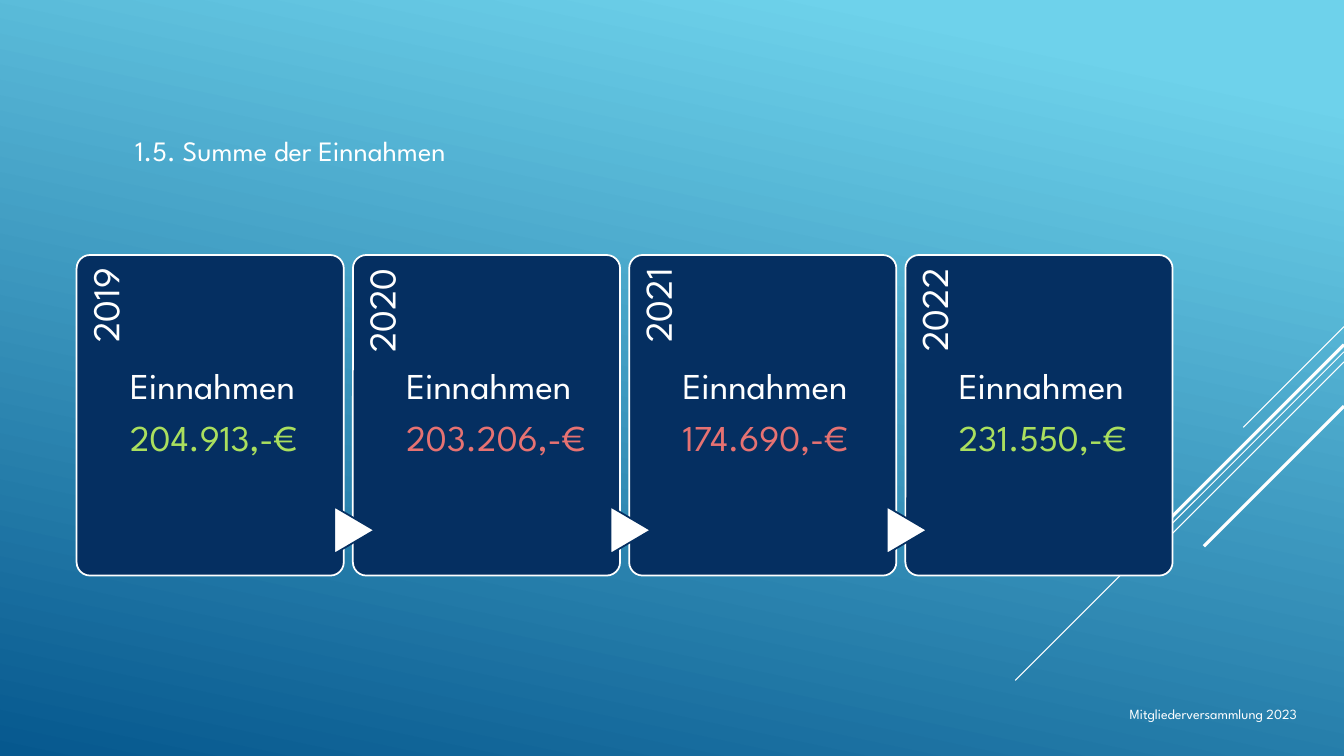
from dataclasses import dataclass

from lxml import etree
from pptx import Presentation
from pptx.dml.color import RGBColor
from pptx.enum import shapes, text
from pptx.oxml.ns import qn
from pptx.util import Inches, Pt


@dataclass(frozen=True)
class Theme:
    font: str = "League Spartan"
    white: str = "FFFFFF"
    navy: str = "052F61"
    rise: str = "AADF5E"
    fall: str = "E67272"
    sky: str = "6ED2EB"
    sea: str = "06588E"
    title_size: float = 20
    year_size: float = 27
    amount_size: float = 26
    footer_size: float = 10


THEME = Theme()
SLIDE_WIDTH, SLIDE_HEIGHT = 13.33, 7.5

# Diagonals from the right edge: top, horizontal run, line width
DIAGONALS = [
    (3.24, 1.0, 0.75),
    (3.49, 3.26, 0.75),
    (3.59, 2.07, 0.75),
    (3.42, 1.91, 2.25),
    (4.03, 1.39, 2.25),
]

INCOME = [
    ("2019", "204.913,-€", THEME.rise),
    ("2020", "203.206,-€", THEME.fall),
    ("2021", "174.690,-€", THEME.fall),
    ("2022", "231.550,-€", THEME.rise),
]
CARD_LEFT, CARD_TOP, CARD_PITCH = 0.76, 2.53, 2.74
CARD_WIDTH, CARD_HEIGHT = 2.65, 3.18


def rgb(value):
    return RGBColor.from_string(value)


def inches(*values):
    return [Inches(value) for value in values]


def style_runs(para, size, color=THEME.white):
    for span in para.runs:
        span.font.name = THEME.font
        span.font.size = Pt(size)
        span.font.color.rgb = rgb(color)


def set_frame(box, insets, anchor=text.MSO_ANCHOR.TOP):
    """Wrap the text; insets run left, top, right, bottom."""
    frame = box.text_frame
    frame.word_wrap = True
    frame.auto_size = text.MSO_AUTO_SIZE.NONE
    frame.vertical_anchor = anchor
    (frame.margin_left, frame.margin_top,
     frame.margin_right, frame.margin_bottom) = inches(*insets)
    return frame


def add_background(page):
    fill = page.background.fill
    fill.gradient()
    fill.gradient_angle = 258
    stops = [(0.1, THEME.sky), (1.0, THEME.sea)]
    for stop, (position, color) in zip(fill.gradient_stops, stops):
        stop.position = position
        stop.color.rgb = rgb(color)


def add_diagonal(page, top, run, width):
    line = page.shapes.add_connector(
        shapes.MSO_CONNECTOR.STRAIGHT,
        *inches(SLIDE_WIDTH, top, SLIDE_WIDTH - run, top + run))
    line.line.color.rgb = rgb(THEME.white)
    line.line.width = Pt(width)
    etree.SubElement(line._element.spPr, qn("a:effectLst"))


def add_title(page, words):
    title = page.shapes.title
    title.left, title.top, title.width, title.height = inches(0.75, 1.24, 10.32, 0.5)
    frame = set_frame(title, (0.59, 0.05, 0.1, 0.05), text.MSO_ANCHOR.MIDDLE)
    frame.text = words
    para = frame.paragraphs[0]
    para.alignment = text.PP_ALIGN.LEFT
    style_runs(para, THEME.title_size)


def add_shape(page, kind, place, fill, outline):
    shape = page.shapes.add_shape(kind, *inches(*place))
    shape.shadow.inherit = False
    shape.fill.solid()
    shape.fill.fore_color.rgb = rgb(fill)
    shape.line.color.rgb = rgb(outline)
    shape.line.width = Pt(1.25)
    return shape


def add_text(page, place, insets, lines, size, align=text.PP_ALIGN.LEFT, spacing=0.9):
    """Add a text box; each line is a pair of words and colour."""
    box = page.shapes.add_textbox(*inches(*place))
    frame = set_frame(box, insets)
    frame.text = "\n".join(words for words, _ in lines)
    for para, (_, color) in zip(frame.paragraphs, lines):
        para.alignment = align
        para.line_spacing = spacing
        para.space_after = Pt(0.35 * size)
        style_runs(para, size, color)
    return box


def add_card(page, left, year, amount, color, has_arrow):
    card = add_shape(page, shapes.MSO_SHAPE.ROUNDED_RECTANGLE,
                     (left, CARD_TOP, CARD_WIDTH, CARD_HEIGHT), THEME.navy, THEME.white)
    card.adjustments[0] = 0.05
    label = add_text(page, (left - 1.04, 3.57, 2.61, 0.53), (0, 0.1, 0.13, 0),
                     [(year, THEME.white)], THEME.year_size, text.PP_ALIGN.RIGHT)
    label.rotation = 270
    if has_arrow:
        arrow = add_shape(page, shapes.MSO_SHAPE.FLOWCHART_EXTRACT,
                          (left - 0.22, 5.06, 0.47, 0.4), THEME.white, THEME.navy)
        arrow.rotation = 90
    add_text(page, (left + 0.53, CARD_TOP, 1.97, CARD_HEIGHT), (0, 1.12, 0, 0),
             [("Einnahmen", THEME.white), (amount, color)], THEME.amount_size)


def main():
    deck = Presentation()
    deck.slide_width, deck.slide_height = inches(SLIDE_WIDTH, SLIDE_HEIGHT)
    page = deck.slides.add_slide(deck.slide_layouts.get_by_name("Title Only"))
    add_background(page)
    for diagonal in DIAGONALS:
        add_diagonal(page, *diagonal)
    add_title(page, "1.5. Summe der Einnahmen")
    for index, (year, amount, color) in enumerate(INCOME):
        add_card(page, CARD_LEFT + index * CARD_PITCH, year, amount, color, index > 0)
    add_text(page, (4.71, 6.95, 8.25, 0.4), (0.1, 0.05, 0.1, 0.05),
             [("Mitgliederversammlung 2023", THEME.white)], THEME.footer_size,
             text.PP_ALIGN.RIGHT, spacing=1.0)
    deck.save("out.pptx")


if __name__ == "__main__":
    main()
